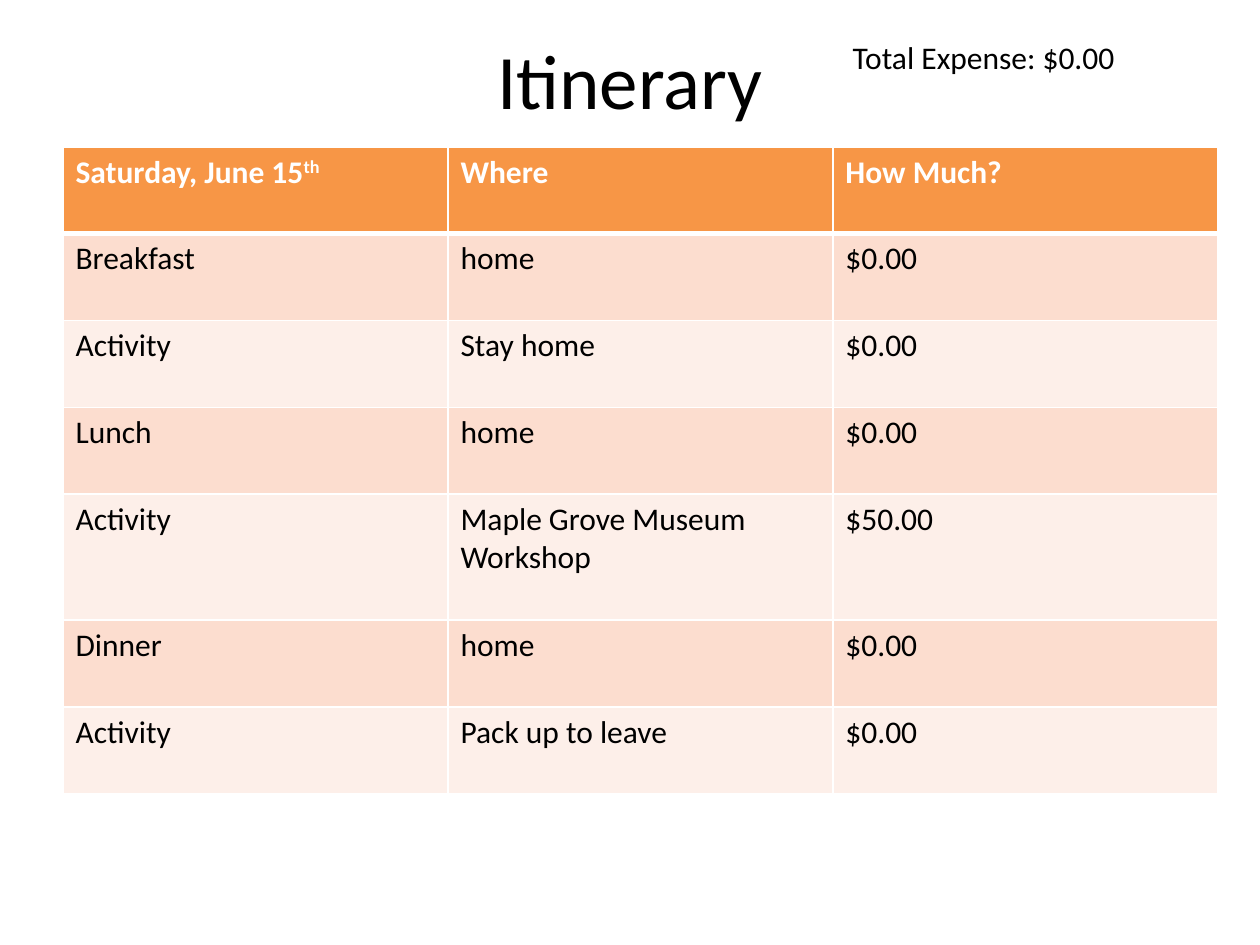
from dataclasses import dataclass

from lxml.etree import SubElement
from pptx import Presentation
from pptx.dml.color import RGBColor
from pptx.enum.text import MSO_ANCHOR, PP_ALIGN
from pptx.oxml.ns import qn
from pptx.util import Cm, Pt


@dataclass(frozen=True)
class Theme:
    font: str = "Calibri"
    title_size: int = 44
    body_size: int = 18
    ink: str = "000000"
    paper: str = "FFFFFF"
    header: str = "F79646"
    bands: tuple = ("FCDDCF", "FDEFE9")
    rule: int = 1
    header_rule: int = 3


THEME = Theme()

HEADINGS = ("Saturday, June 15", "Where", "How Much?")
PLANS = (
    ("Breakfast", "home", "$0.00"),
    ("Activity", "Stay home", "$0.00"),
    ("Lunch", "home", "$0.00"),
    ("Activity", "Maple Grove Museum Workshop", "$50.00"),
    ("Dinner", "home", "$0.00"),
    ("Activity", "Pack up to leave", "$0.00"),
)
COLUMN_WIDTH = Cm(7.76)
ROW_HEIGHT = Cm(1.75)
TALL_ROW_HEIGHT = Cm(2.54)
TALL_ROW = 4


def format_text(frame, size, color=THEME.ink, bold=False):
    for paragraph in frame.paragraphs:
        for run in paragraph.runs:
            run.font.name = THEME.font
            run.font.size = Pt(size)
            run.font.bold = bold
            run.font.color.rgb = RGBColor.from_string(color)


def add_title(slide, text):
    title = slide.shapes.title
    title.left, title.top, title.width, title.height = Cm(1.27), Cm(0), Cm(22.86), Cm(3.18)
    frame = title.text_frame
    frame.text = text
    frame.vertical_anchor = MSO_ANCHOR.MIDDLE
    frame.paragraphs[0].alignment = PP_ALIGN.CENTER
    format_text(frame, THEME.title_size)


def add_total(slide, text):
    total = slide.shapes.add_textbox(Cm(16.94), Cm(0.64), Cm(7.82), Cm(1.02))
    frame = total.text_frame
    frame.word_wrap = True
    frame.text = text
    format_text(frame, THEME.body_size)


def add_superscript(paragraph, text):
    run = paragraph.add_run()
    run.text = text
    run.font._element.set("baseline", "30000")


def set_borders(cell, top, bottom):
    """Draw the cell's four borders; top and bottom widths are in points."""
    properties = cell._tc.get_or_add_tcPr()
    for side, width in (("L", THEME.rule), ("R", THEME.rule), ("T", top), ("B", bottom)):
        line = SubElement(properties, qn(f"a:ln{side}"), w=str(Pt(width)))
        fill = SubElement(line, qn("a:solidFill"))
        SubElement(fill, qn("a:srgbClr"), val=THEME.paper)


def style_cell(cell, row):
    is_header = row == 0
    set_borders(
        cell,
        top=THEME.header_rule if row == 1 else THEME.rule,
        bottom=THEME.header_rule if is_header else THEME.rule,
    )
    background = THEME.header if is_header else THEME.bands[(row - 1) % 2]
    cell.fill.solid()
    cell.fill.fore_color.rgb = RGBColor.from_string(background)
    color = THEME.paper if is_header else THEME.ink
    format_text(cell.text_frame, THEME.body_size, color, bold=is_header)


def add_itinerary(slide):
    rows = (HEADINGS, *PLANS)
    width = COLUMN_WIDTH * len(HEADINGS)
    height = ROW_HEIGHT * len(PLANS) + TALL_ROW_HEIGHT
    table = slide.shapes.add_table(
        len(rows), len(HEADINGS), Cm(1.27), Cm(2.96), width, height
    ).table
    for column in table.columns:
        column.width = COLUMN_WIDTH
    for r, texts in enumerate(rows):
        table.rows[r].height = TALL_ROW_HEIGHT if r == TALL_ROW else ROW_HEIGHT
        for c, text in enumerate(texts):
            cell = table.cell(r, c)
            cell.text_frame.text = text
            if (r, c) == (0, 0):
                add_superscript(cell.text_frame.paragraphs[0], "th")
            style_cell(cell, r)


def main():
    deck = Presentation()
    deck.slide_width, deck.slide_height = Cm(25.4), Cm(19.05)
    slide = deck.slides.add_slide(deck.slide_layouts.get_by_name("Title Only"))
    add_title(slide, "Itinerary")
    add_total(slide, "Total Expense: $0.00")
    add_itinerary(slide)
    deck.save("out.pptx")


if __name__ == "__main__":
    main()
